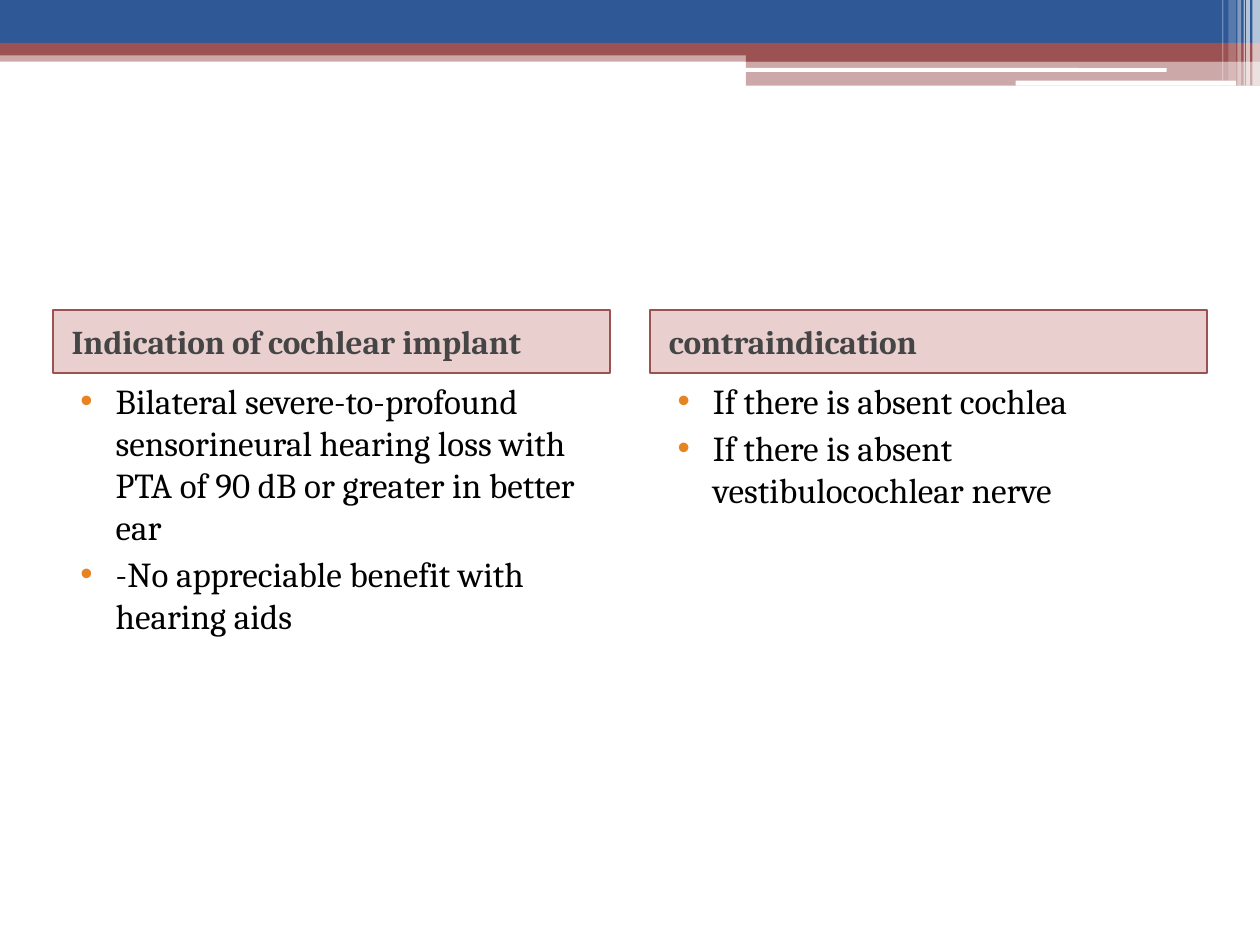
from lxml.etree import SubElement
from pptx import Presentation
from pptx.dml.color import RGBColor
from pptx.enum.shapes import MSO_SHAPE as SHAPE
from pptx.enum.text import MSO_ANCHOR as ANCHOR, PP_ALIGN as ALIGN
from pptx.oxml.ns import qn
from pptx.util import Inches, Pt

BLUE, RED, WHITE = "2F5897", "9C5252", "FFFFFF"
BANDS = [
    (0, 0.4, 10, 0.09, RED, 50),
    (0, 0, 10, 0.34, BLUE, 100),
    (0, 0.34, 10, 0.1, RED, 100),
    (5.92, 0.39, 4.08, 0.1, RED, 100),
    (5.92, 0.48, 4.08, 0.2, RED, 50),
]
GROOVES = [(5.91, 0.54, 3.35, 0.03), (8.06, 0.64, 1.75, 0.04)]
STRIPES = [
    (9.94, 0.06, 0.68, 65),
    (9.89, 0.03, 0.68, 65),
    (9.87, 0.01, 0.68, 60),
    (9.82, 0.03, 0.68, 40),
    (9.75, 0.06, 0.64, 20),
    (9.7, 0.01, 0.64, 30),
]
COLUMNS = [
    ("Indication of cochlear implant", [
        "Bilateral severe-to-profound sensorineural hearing loss with "
        "PTA of 90 dB or greater in better ear",
        "-No appreciable benefit with hearing aids",
    ]),
    ("contraindication", [
        "If there is absent cochlea",
        "If there is absent vestibulocochlear nerve",
    ]),
]


def rgb(color):
    return RGBColor.from_string(color)


def add_box(slide, x, y, w, h, color, opacity=100, kind=SHAPE.RECTANGLE):
    s = slide.shapes.add_shape(kind, Inches(x), Inches(y), Inches(w), Inches(h))
    s.shadow.inherit = False
    s.fill.solid()
    s.fill.fore_color.rgb = rgb(color)
    s.line.fill.background()
    if opacity < 100:
        clr = s._element.spPr.find(".//" + qn("a:srgbClr"))
        SubElement(clr, qn("a:alpha"), val=str(opacity * 1000))
    return s


def style_paragraph(p, size, color, margin, indent=0, bold=False):
    p.alignment = ALIGN.LEFT
    p.space_before = Pt(3)
    pPr = p._p.get_or_add_pPr()
    pPr.set("marL", str(Inches(margin)))
    pPr.set("indent", str(Inches(indent)))
    for r in p.runs:
        r.font.name = "Cambria"
        r.font.size = Pt(size)
        r.font.bold = bold
        r.font.color.rgb = rgb(color)


def add_bullet(p, color):
    pPr = p._p.get_or_add_pPr()
    SubElement(SubElement(pPr, qn("a:buClr")), qn("a:srgbClr"), val=color)
    SubElement(pPr, qn("a:buFont"), typeface="Arial")
    SubElement(pPr, qn("a:buChar"), char="•")


def add_banner(slide):
    for band in BANDS:
        add_box(slide, *band)
    for groove in GROOVES:
        add_box(slide, *groove, WHITE, kind=SHAPE.ROUNDED_RECTANGLE)
    for x, w, h, opacity in STRIPES:
        add_box(slide, x, 0, w, h, WHITE, opacity)


def add_column(slide, x, y, w, h, heading, items):
    head_h = 0.5
    s = add_box(slide, x, y, w, head_h, "AE4040", 25)
    s.line.color.rgb = rgb(RED)
    s.line.width = Pt(1)
    tf = s.text_frame
    tf.word_wrap = True
    tf.vertical_anchor = ANCHOR.MIDDLE
    tf.text = heading
    style_paragraph(tf.paragraphs[0], 19, "454545", 0.05, bold=True)

    sp = slide.shapes.add_textbox(Inches(x), Inches(y + head_h),
                                  Inches(w), Inches(h - head_h))
    tf = sp.text_frame
    tf.word_wrap = True
    tf.text = "\n".join(items)
    for p in tf.paragraphs:
        style_paragraph(p, 20, "000000", 0.4, -0.28)
        add_bullet(p, "E68422")


def main():
    prs = Presentation()
    prs.slide_width, prs.slide_height = Inches(10), Inches(7.5)
    slide = prs.slides.add_slide(prs.slide_layouts[6])
    add_banner(slide)
    left, width, gap = 0.42, 4.42, 0.32
    for i, (heading, items) in enumerate(COLUMNS):
        add_column(slide, left + i * (width + gap), 2.46, width, 4.75,
                   heading, items)
    prs.save("out.pptx")


if __name__ == "__main__":
    main()
